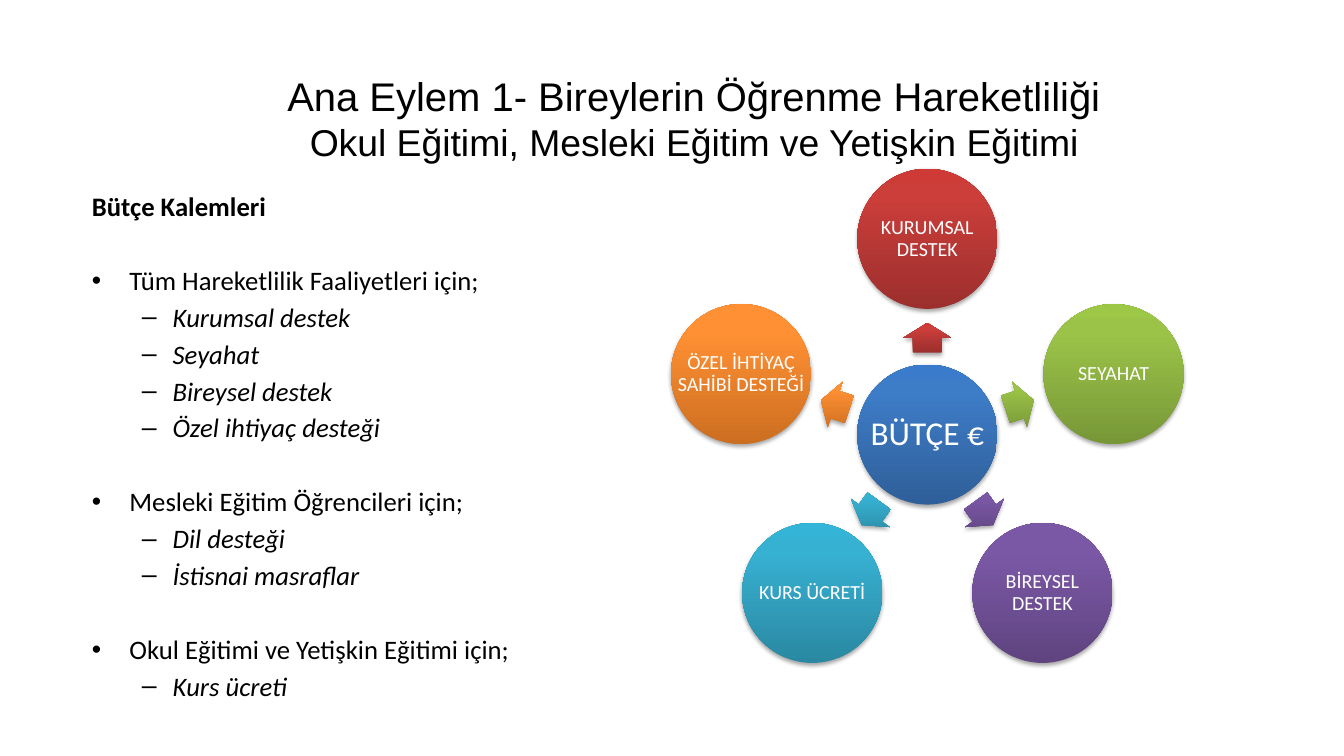
import copy
import dataclasses
import math

import lxml.etree
import pptx
import pptx.dml.color
import pptx.enum.shapes
import pptx.enum.text
import pptx.oxml
import pptx.oxml.ns
import pptx.util

Inches = pptx.util.Inches
Pt = pptx.util.Pt
RGB = pptx.dml.color.RGBColor.from_string
SHAPE = pptx.enum.shapes.MSO_SHAPE
ALIGN = pptx.enum.text.PP_ALIGN
ANCHOR = pptx.enum.text.MSO_ANCHOR
NS = pptx.oxml.ns.nsdecls("a")


@dataclasses.dataclass(frozen=True)
class Theme:
    title_font: str = "Arial"
    body_font: str = "Calibri"
    ink: str = "000000"
    paper: str = "FFFFFF"
    title_size: int = 30
    subtitle_size: int = 28
    body_size: int = 20
    hub_size: int = 25
    label_size: int = 15
    # Gradient stops from bottom to top
    blue: tuple = ("2F5F99", "3D7CC7", "3A7CCB")
    red: tuple = ("9C2F2D", "CB3E3A", "CE3B37")
    green: tuple = ("779737", "9BC348", "9DC746")
    purple: tuple = ("5F4480", "7B58A6", "7C57A8")
    teal: tuple = ("2A88A2", "37B1D2", "34B4D6")
    orange: tuple = ("CC6E20", "FF9034", "FF9136")


theme = Theme()


def add_glossy(kind, x, y, width, height, colors):
    """Add a shape centred on x, y with a gradient and a soft shadow."""
    shape = page.shapes.add_shape(
        kind, Inches(x - width / 2), Inches(y - height / 2), Inches(width), Inches(height))
    shape.line.fill.background()
    stops = "".join(
        f'<a:gs pos="{position}"><a:srgbClr val="{color}"/></a:gs>'
        for position, color in zip((0, 80000, 100000), colors))
    gradient = pptx.oxml.parse_xml(
        f'<a:gradFill {NS} rotWithShape="0"><a:gsLst>{stops}</a:gsLst>'
        '<a:lin ang="16200000" scaled="0"/></a:gradFill>')
    shadow = pptx.oxml.parse_xml(
        f'<a:effectLst {NS}><a:outerShdw blurRad="40000" dist="23000" dir="5400000" '
        'rotWithShape="0"><a:srgbClr val="000000"><a:alpha val="35000"/></a:srgbClr>'
        '</a:outerShdw></a:effectLst>')
    properties = shape.element.spPr
    properties.find(pptx.oxml.ns.qn("a:prstGeom")).addnext(gradient)
    properties.append(shadow)
    return shape


def add_disc(x, y, label, size, colors):
    """Add a circle and its label, which may use the circle's full width."""
    add_glossy(SHAPE.OVAL, x, y, DISC, DISC, colors)
    box = page.shapes.add_textbox(
        Inches(x - DISC / 2), Inches(y - DISC / 2), Inches(DISC), Inches(DISC))
    frame = box.text_frame
    frame.word_wrap = True
    frame.vertical_anchor = ANCHOR.MIDDLE
    frame.margin_left = frame.margin_right = Inches(0.02)
    frame.margin_top = frame.margin_bottom = Inches(0.02)
    para = frame.paragraphs[0]
    para.alignment = ALIGN.CENTER
    para.line_spacing = 0.9
    span = para.add_run()
    span.text = label
    span.font.name = theme.body_font
    span.font.size = Pt(size)
    span.font.color.rgb = RGB(theme.paper)


deck = pptx.Presentation()
deck.slide_width = Inches(14)
deck.slide_height = Inches(7.88)
page = deck.slides.add_slide(deck.slide_layouts[5])

# Title in two lines
title = page.shapes.title
title.left, title.top = Inches(0.69), Inches(0.88)
title.width, title.height = Inches(13.08), Inches(0.7)
title.text_frame.auto_size = pptx.enum.text.MSO_AUTO_SIZE.NONE
title.text_frame.vertical_anchor = ANCHOR.MIDDLE
para = title.text_frame.paragraphs[0]
para.alignment = ALIGN.CENTER
for text, size in (
    ("Ana Eylem 1- Bireylerin Öğrenme Hareketliliği", theme.title_size),
    ("Okul Eğitimi, Mesleki Eğitim ve Yetişkin Eğitimi", theme.subtitle_size),
):
    if para.runs:
        # The break takes the format of the line it ends
        first = para.runs[0]
        para.add_line_break()
        first._r.getnext().append(copy.deepcopy(first._r.rPr))
    span = para.add_run()
    span.text = text
    span.font.name = theme.title_font
    span.font.size = Pt(size)
    span.font.color.rgb = RGB(theme.ink)

# Budget items: heading, then bulleted groups
sections = (
    ("Tüm Hareketlilik Faaliyetleri için;",
     ("Kurumsal destek", "Seyahat", "Bireysel destek", "Özel ihtiyaç desteği")),
    ("Mesleki Eğitim Öğrencileri için;", ("Dil desteği", "İstisnai masraflar")),
    ("Okul Eğitimi ve Yetişkin Eğitimi için;", ("Kurs ücreti",)),
)
LINE_GAP, SECTION_GAP = 3.6, 31.6
# text, level, bullet, left margin, hanging indent, space before
lines = [("Bütçe Kalemleri", 0, None, 0, 0, 0)]
for heading, items in sections:
    lines.append((heading, 0, "•", 0.39, 0.39, SECTION_GAP))
    lines += [(item, 1, "–", 0.84, 0.32, LINE_GAP) for item in items]

body = page.shapes.add_textbox(Inches(0.86), Inches(1.93), Inches(12.6), Inches(4.99))
frame = body.text_frame
frame.word_wrap = True
for number, (text, level, bullet, margin, hanging, gap) in enumerate(lines):
    para = frame.add_paragraph() if number else frame.paragraphs[0]
    para.level = level
    para.space_before = Pt(gap)
    if bullet:
        settings = para._p.get_or_add_pPr()
        settings.set("marL", str(Inches(margin)))
        settings.set("indent", str(-Inches(hanging)))
        face = lxml.etree.SubElement(settings, pptx.oxml.ns.qn("a:buFont"))
        face.set("typeface", theme.title_font)
        mark = lxml.etree.SubElement(settings, pptx.oxml.ns.qn("a:buChar"))
        mark.set("char", bullet)
    span = para.add_run()
    span.text = text
    span.font.name = theme.body_font
    span.font.size = Pt(theme.body_size)
    span.font.color.rgb = RGB(theme.ink)
    span.font.bold = bullet is None
    span.font.italic = level == 1

# Radial diagram: hub, then arrows and discs at equal angles
DISC = 1.46
HUB_X, HUB_Y = 9.66, 4.53
ARROW_RADIUS, DISC_RADIUS = 1.01, 2.04
add_disc(HUB_X, HUB_Y, "BÜTÇE €", theme.hub_size, theme.blue)

spokes = (
    ("KURUMSAL DESTEK", theme.red),
    ("SEYAHAT", theme.green),
    ("BİREYSEL DESTEK", theme.purple),
    ("KURS ÜCRETİ", theme.teal),
    ("ÖZEL İHTİYAÇ SAHİBİ DESTEĞİ", theme.orange),
)
for number, (label, colors) in enumerate(spokes):
    angle = (270 + number * 360 / len(spokes)) % 360
    across, down = math.cos(math.radians(angle)), math.sin(math.radians(angle))
    arrow = add_glossy(
        SHAPE.RIGHT_ARROW, HUB_X + ARROW_RADIUS * across, HUB_Y + ARROW_RADIUS * down,
        0.31, 0.5, colors)
    arrow.adjustments[0], arrow.adjustments[1] = 0.6, 0.5
    arrow.rotation = angle
    add_disc(HUB_X + DISC_RADIUS * across, HUB_Y + DISC_RADIUS * down,
             label, theme.label_size, colors)

deck.save("out.pptx")
